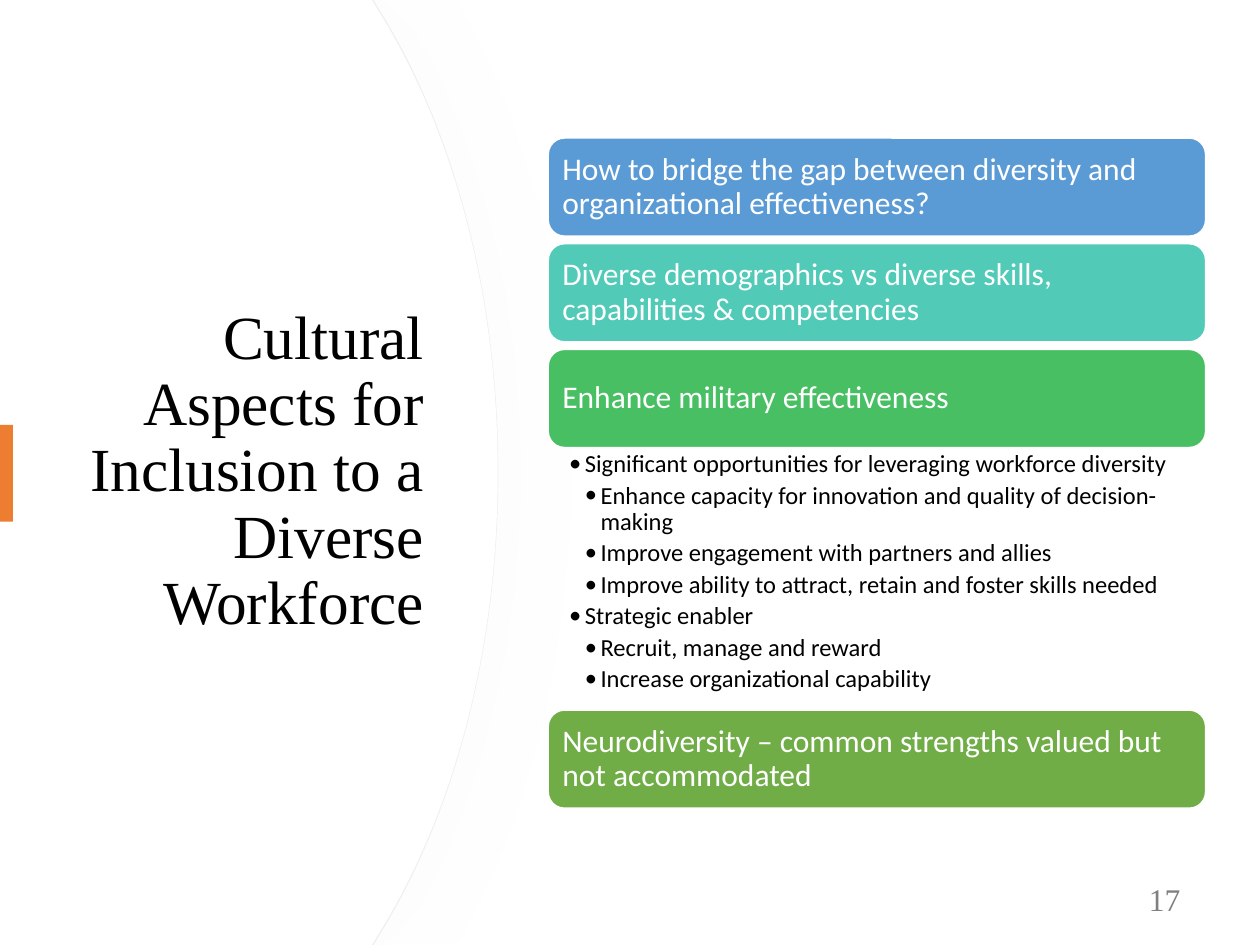
from lxml import etree
from pptx import Presentation
from pptx.dml.color import RGBColor
from pptx.enum.shapes import MSO_SHAPE as Shape
from pptx.enum.text import MSO_ANCHOR as Anchor, PP_ALIGN as Align
from pptx.oxml import parse_xml
from pptx.oxml.ns import qn
from pptx.util import Pt

COLORS = {
    "white": "FFFFFF", "black": "000000", "edge": "EFEFEF", "shadow": "D9D9D9",
    "accent": "ED7D31", "number": "808080",
    "blue": "5B9BD5", "teal": "52CAB8", "green": "49BF64", "olive": "70AD47",
}
SERIF, SANS = "Times New Roman", "Calibri"
A_NS = "http://schemas.openxmlformats.org/drawingml/2006/main"


def rgb(name):
    return RGBColor.from_string(COLORS[name])


def write(frame, lines, font, size, color, align=Align.LEFT, anchor=Anchor.MIDDLE):
    """Fill a text frame with one paragraph per line and return the paragraphs."""
    frame.word_wrap = True
    frame.vertical_anchor = anchor
    frame.text = "\n".join(lines)
    for paragraph in frame.paragraphs:
        paragraph.alignment = align
        paragraph.line_spacing = 0.9
        paragraph.font.name = font
        paragraph.font.size = Pt(size)
        paragraph.font.color.rgb = rgb(color)
    return frame.paragraphs


deck = Presentation()
deck.slide_width, deck.slide_height = Pt(720), Pt(540)
slide = deck.slides.add_slide(deck.slide_layouts[6])
shapes = slide.shapes

# Curved panel: a white face over a softly shadowed edge.
# The corners are joined by lines, two of which become Bezier curves.
HANDLES = [[(258.5, 73.4), (284.4, 167)], [(284.4, 373), (258.5, 466.6)]]
for outlined, corner in ((True, 213), (False, 212.4)):
    outline = [(corner, 0), (corner + 3.5, 5.8), (284.4, 270),
               (corner + 3.5, 534.2), (corner, 540), (0, 540)]
    builder = shapes.build_freeform(0, 0)
    builder.add_line_segments([(Pt(x), Pt(y)) for x, y in outline], close=True)
    panel = builder.convert_to_shape()
    segments = list(panel.element.iter(qn("a:lnTo")))
    for segment, handles in zip(segments[2:4], HANDLES):
        curve = etree.Element(qn("a:cubicBezTo"))
        for x, y in handles:
            etree.SubElement(curve, qn("a:pt"), x=str(Pt(x)), y=str(Pt(y)))
        curve.append(segment[0])
        segment.getparent().replace(segment, curve)
    panel.shadow.inherit = False
    panel.fill.solid()
    panel.fill.fore_color.rgb = rgb("white")
    if outlined:
        panel.line.color.rgb = rgb("edge")
        panel.line.width = Pt(0.75)
        effects = panel.element.spPr.find(qn("a:effectLst"))
        effects.append(parse_xml(
            f'<a:outerShdw xmlns:a="{A_NS}" blurRad="{Pt(50)}" dist="{Pt(3)}" dir="0">'
            f'<a:srgbClr val="{COLORS["shadow"]}"><a:alpha val="7000"/></a:srgbClr>'
            '</a:outerShdw>'))
    else:
        panel.line.fill.background()

title = shapes.add_textbox(Pt(36.4), Pt(91.6), Pt(213), Pt(356.4))
write(title.text_frame, ["Cultural Aspects for Inclusion to a Diverse Workforce"],
      SERIF, 35, "black", Align.RIGHT)

accent = shapes.add_shape(Shape.RECTANGLE, 0, Pt(242.8), Pt(7.4), Pt(55.4))
accent.shadow.inherit = False
accent.fill.solid()
accent.fill.fore_color.rgb = rgb("accent")
accent.line.fill.background()

slide_number = shapes.add_textbox(Pt(519.6), Pt(500.4), Pt(162), Pt(28.8))
write(slide_number.text_frame, ["17"], SERIF, 18, "number", Align.RIGHT)

# Topic cards, with the details below the third one
LEFT, WIDTH, CARD_HEIGHT = 313.2, 375.8, 56.2
FIRST_TOP, PITCH = 78.8, 60.4
topics = [
    (FIRST_TOP, "blue",
     "How to bridge the gap between diversity and organizational effectiveness?"),
    (FIRST_TOP + PITCH, "teal",
     "Diverse demographics vs diverse skills, capabilities & competencies"),
    (FIRST_TOP + 2 * PITCH, "green", "Enhance military effectiveness"),
    (405.7, "olive", "Neurodiversity – common strengths valued but not accommodated"),
]
for top, color, topic in topics:
    card = shapes.add_shape(Shape.ROUNDED_RECTANGLE, Pt(LEFT), Pt(top),
                            Pt(WIDTH), Pt(CARD_HEIGHT))
    card.shadow.inherit = False
    card.fill.solid()
    card.fill.fore_color.rgb = rgb(color)
    card.line.color.rgb = rgb("white")
    card.line.width = Pt(1)
    frame = card.text_frame
    frame.margin_left = frame.margin_right = Pt(5.4)
    frame.margin_top = frame.margin_bottom = Pt(5)
    write(frame, [topic], SANS, 18, "white")

details = [
    (1, "Significant opportunities for leveraging workforce diversity"),
    (2, "Enhance capacity for innovation and quality of decision-making"),
    (2, "Improve engagement with partners and allies"),
    (2, "Improve ability to attract, retain and foster skills needed"),
    (1, "Strategic enabler"),
    (2, "Recruit, manage and reward"),
    (2, "Increase organizational capability"),
]
INDENT = 9
detail_box = shapes.add_textbox(Pt(LEFT), Pt(256), Pt(WIDTH), Pt(149.8))
frame = detail_box.text_frame
frame.margin_left, frame.margin_right = Pt(12), Pt(10)
frame.margin_top = frame.margin_bottom = Pt(2)
paragraphs = write(frame, [line for _, line in details], SANS, 14, "black",
                   anchor=Anchor.TOP)
for paragraph, (level, _) in zip(paragraphs, details):
    paragraph.level = level
    paragraph.space_after = Pt(2.8)
    properties = paragraph._p.get_or_add_pPr()
    properties.set("marL", str(Pt(INDENT * level)))
    properties.set("indent", str(Pt(-INDENT)))
    defaults = properties.find(qn("a:defRPr"))
    defaults.addprevious(etree.Element(qn("a:buFont"), typeface=SANS))
    defaults.addprevious(etree.Element(qn("a:buChar"), char="•"))

deck.save("out.pptx")
